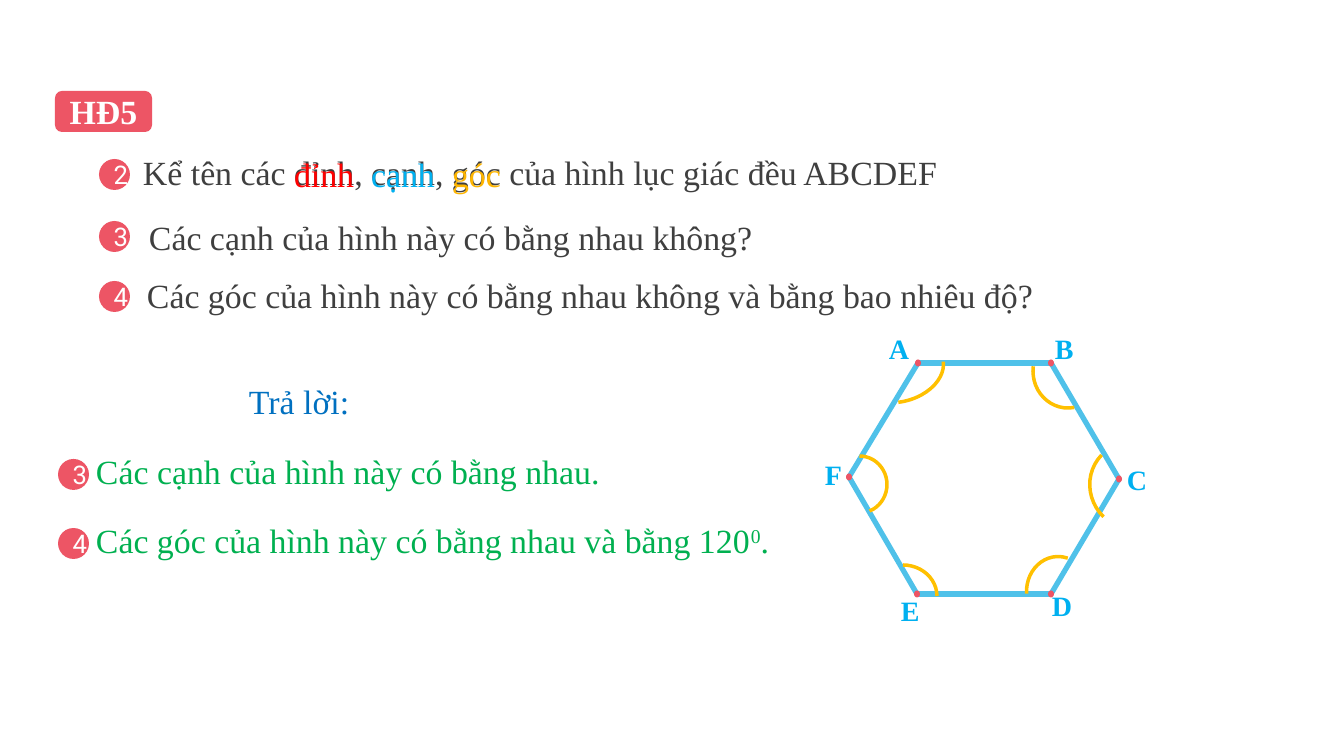
from itertools import pairwise

from lxml.etree import SubElement
from pptx import Presentation
from pptx.dml.color import RGBColor as Color
from pptx.enum.shapes import MSO_CONNECTOR as Connector, MSO_SHAPE as Preset
from pptx.enum.text import MSO_ANCHOR as Anchor, PP_ALIGN as Align
from pptx.oxml.ns import qn
from pptx.util import Pt

PX = 914400 // 84
THEME = {
    "accent": "ED5565", "side": "4FC1E9", "angle": "FFC000",
    "styles": {
        "heading": ("Times New Roman", 29, "FFFFFF", True),
        "badge": ("Roboto", 22, "FFFFFF", False),
        "question": ("Times New Roman", 29, "3F3F3F", False),
        "reply": ("Times New Roman", 29, "0070C0", False),
        "answer": ("Times New Roman", 29, "00B050", False),
        "vertex word": ("Times New Roman", 29, "FF0000", False),
        "side word": ("Times New Roman", 29, "00B0F0", False),
        "angle word": ("Times New Roman", 29, "FEB500", False),
        "vertex": ("Times New Roman", 24, "00B0F0", True),
    },
}

deck = Presentation()
deck.slide_width, deck.slide_height = 1344 * PX, 756 * PX
page = deck.slides.add_slide(deck.slide_layouts[6])


def add_filled(preset, *frame):
    shape = page.shapes.add_shape(preset, *(round(value * PX) for value in frame))
    shape.shadow.inherit = False
    shape.fill.solid()
    shape.fill.fore_color.rgb = Color.from_string(THEME["accent"])
    shape.line.fill.background()
    return shape


def write(box, spans, style, inset=(10, 5), left=None, **layout):
    """Fill box with (text, baseline) spans in a theme style."""
    across, down = inset
    frame_format = {
        "word_wrap": True,
        "margin_left": (across if left is None else left) * PX,
        "margin_right": across * PX,
        "margin_top": down * PX,
        "margin_bottom": down * PX,
        "vertical_anchor": layout.get("anchor", Anchor.TOP),
    }
    for name, value in frame_format.items():
        setattr(box.text_frame, name, value)
    para = box.text_frame.paragraphs[0]
    para.alignment = layout.get("align", Align.LEFT)
    family, size, color, bold = THEME["styles"][style]
    for text, baseline in spans:
        span = para.add_run()
        span.text = text
        for name, value in {"name": family, "size": Pt(size), "bold": bold}.items():
            setattr(span.font, name, value)
        span.font.color.rgb = Color.from_string(color)
        if baseline:
            span.font._element.set("baseline", str(baseline))


centred = {"anchor": Anchor.MIDDLE, "align": Align.CENTER}

# Heading and numbered badges
write(add_filled(Preset.ROUNDED_RECTANGLE, 55, 91, 97, 41), [("HĐ5", 0)], "heading", **centred)
badges = [("2", 99, 159), ("3", 99, 221), ("4", 99, 281), ("3", 58, 459), ("4", 58, 528)]
for number, left, top in badges:
    write(add_filled(Preset.OVAL, left, top, 31, 31), [(number, 0)], "badge", **centred)

# Questions, reply heading and answers: left, top, width, left inset, style, spans
sentences = [
    (99, 147, 948, 44, "question",
     [("Kể tên các đỉnh, cạnh, góc của hình lục giác đều ABCDEF", 0)]),
    (105, 212, 948, 44, "question", [("Các cạnh của hình này có bằng nhau không?", 0)]),
    (103, 270, 948, 44, "question",
     [("Các góc của hình này có bằng nhau không và bằng bao nhiêu độ?", 0)]),
    (239, 376, 151, 10, "reply", [("Trả lời:", 0)]),
    (86, 446, 538, 10, "answer", [("Các cạnh của hình này có bằng nhau.", 0)]),
    (86, 515, 701, 10, "answer",
     [("Các góc của hình này có bằng nhau và bằng 120", 0), ("0", 30000), (".", 0)]),
]
for left, top, width, indent, style, spans in sentences:
    box = page.shapes.add_textbox(left * PX, top * PX, width * PX, 51 * PX)
    write(box, spans, style, left=indent)

# Coloured words laid over the first question
for word, left, style in [("đỉnh", 286, "vertex word"), ("cạnh", 363, "side word"),
                          ("góc", 444, "angle word")]:
    box = page.shapes.add_textbox(left * PX, 150 * PX, 138 * PX, 50 * PX)
    write(box, [(word, 0)], style, inset=(8, 4))

# Hexagon: vertex position, then label position
vertices = {
    "A": ((918, 363), (881, 328)),
    "B": ((1051, 363), (1047, 328)),
    "C": ((1119, 479), (1119, 459)),
    "D": ((1051, 594), (1044, 585)),
    "E": ((917, 594), (893, 590)),
    "F": ((849, 477), (817, 454)),
}
corners = [point for point, _ in vertices.values()]
for start, end in pairwise(corners + corners[:1]):
    side = page.shapes.add_connector(Connector.STRAIGHT, *(value * PX for value in start + end))
    side.line.color.rgb = Color.from_string(THEME["side"])
    side.line.width = Pt(4.5)
    SubElement(side._element.spPr, qn("a:effectLst"))

for letter, ((x, y), (left, top)) in vertices.items():
    label = page.shapes.add_textbox(left * PX, top * PX, 43 * PX, 42 * PX)
    write(label, [(letter, 0)], "vertex", inset=(8, 4))
    add_filled(Preset.OVAL, x - 3, y - 3.5, 6, 7)

# Angle marks: frame, rotation, start and end of the arc
angles = [
    ((865, 323, 65, 93), 77.4, (163.74, 6.73)),
    ((1033, 333, 71, 75), 186.9, (152.49, 0)),
    ((1089, 443, 89, 86), 224.2, (162, 0)),
    ((1023, 560, 71, 64), 267.2, (162, 10.86)),
    ((869, 565, 68, 62), 0, (162, 0)),
    ((832, 456, 55, 57), 0, (162, 41.49)),
]
for frame, rotation, sweep in angles:
    arc = page.shapes.add_shape(Preset.ARC, *(value * PX for value in frame))
    arc.shadow.inherit = False
    arc.fill.background()
    arc.line.color.rgb = Color.from_string(THEME["angle"])
    arc.line.width = Pt(3)
    arc.rotation = rotation
    for index, value in enumerate(sweep):
        arc.adjustments[index] = value

deck.save("out.pptx")
